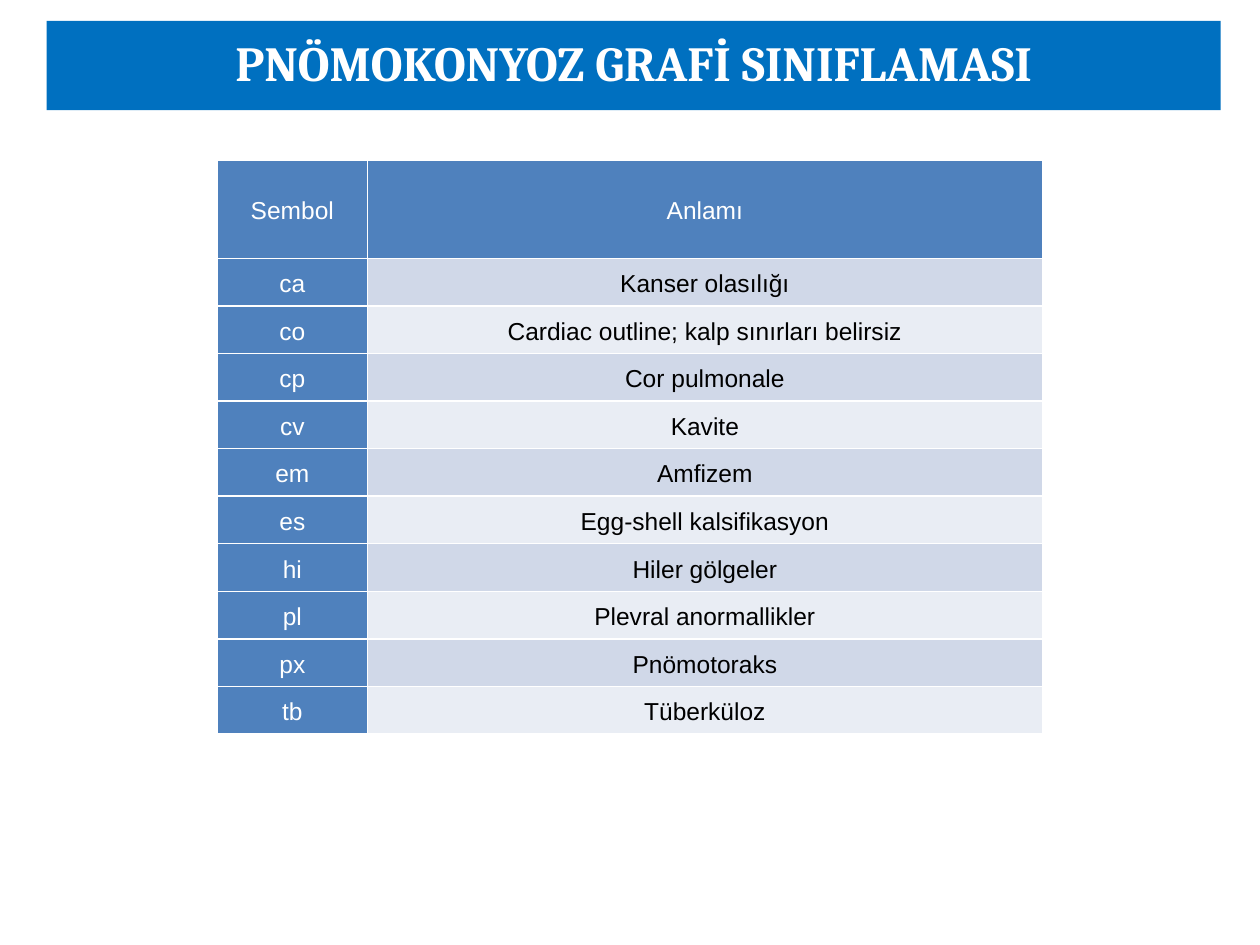
from lxml import etree
from pptx import Presentation
from pptx.dml.color import RGBColor
from pptx.enum import text
from pptx.oxml import ns
from pptx.util import Pt

TITLE = "PNÖMOKONYOZ GRAFİ SINIFLAMASI"
ROWS = [
    ("Sembol", "Anlamı"),
    ("ca", "Kanser olasılığı"),
    ("co", "Cardiac outline; kalp sınırları belirsiz"),
    ("cp", "Cor pulmonale"),
    ("cv", "Kavite"),
    ("em", "Amfizem"),
    ("es", "Egg-shell kalsifikasyon"),
    ("hi", "Hiler gölgeler"),
    ("pl", "Plevral anormallikler"),
    ("px", "Pnömotoraks"),
    ("tb", "Tüberküloz"),
]

WHITE = RGBColor(0xFF, 0xFF, 0xFF)
BLACK = RGBColor(0x00, 0x00, 0x00)
TITLE_BLUE = RGBColor(0x00, 0x70, 0xC0)
HEADER_BLUE = RGBColor(0x4F, 0x81, 0xBD)
BANDS = (RGBColor(0xE9, 0xED, 0xF4), RGBColor(0xD0, 0xD8, 0xE8))

TABLE_LEFT, TABLE_TOP = 124.2, 91.4
COLUMN_WIDTHS = (85.7, 385.8)
HEADER_HEIGHT, ROW_HEIGHT = 56.2, 27.2


def set_attributes(target, values):
    for name, value in values.items():
        setattr(target, name, value)


def format_paragraph(paragraph, line_spacing, font, color):
    paragraph.alignment = text.PP_ALIGN.CENTER
    paragraph.line_spacing = line_spacing
    set_attributes(paragraph.font, font)
    paragraph.font.color.rgb = color


def add_borders(cell, color, width):
    """Draw the four cell borders, which must come before the cell's fill."""
    properties = cell._tc.get_or_add_tcPr()
    for index, side in enumerate(("lnL", "lnR", "lnT", "lnB")):
        line = etree.Element(ns.qn(f"a:{side}"), w=str(Pt(width)))
        fill = etree.SubElement(line, ns.qn("a:solidFill"))
        etree.SubElement(fill, ns.qn("a:srgbClr"), val=str(color))
        properties.insert(index, line)


def add_title(slide):
    title = slide.shapes.title
    set_attributes(title, {"left": Pt(26.6), "top": Pt(12), "width": Pt(671), "height": Pt(51)})
    title.fill.solid()
    title.fill.fore_color.rgb = TITLE_BLUE
    frame = title.text_frame
    frame.text = TITLE
    set_attributes(frame, {
        "auto_size": text.MSO_AUTO_SIZE.NONE, "word_wrap": True,
        "vertical_anchor": text.MSO_ANCHOR.MIDDLE,
        "margin_left": 0, "margin_right": 0,
        "margin_top": Pt(3.6), "margin_bottom": Pt(3.6),
    })
    format_paragraph(frame.paragraphs[0], 0.9,
                     {"name": "Cambria", "size": Pt(28), "bold": True}, WHITE)


def add_symbol_table(slide):
    heights = [HEADER_HEIGHT] + [ROW_HEIGHT] * (len(ROWS) - 1)
    table = slide.shapes.add_table(
        len(ROWS), len(COLUMN_WIDTHS), Pt(TABLE_LEFT), Pt(TABLE_TOP),
        Pt(sum(COLUMN_WIDTHS)), Pt(sum(heights))).table
    for column, width in zip(table.columns, COLUMN_WIDTHS):
        column.width = Pt(width)
    for row_index, (row, height) in enumerate(zip(ROWS, heights)):
        table.rows[row_index].height = Pt(height)
        for column_index, words in enumerate(row):
            is_heading = row_index == 0 or column_index == 0
            cell = table.cell(row_index, column_index)
            cell.text = words
            set_attributes(cell, {
                "vertical_anchor": text.MSO_ANCHOR.MIDDLE,
                "margin_left": Pt(5), "margin_right": Pt(5),
                "margin_top": 0, "margin_bottom": 0,
            })
            cell.fill.solid()
            cell.fill.fore_color.rgb = HEADER_BLUE if is_heading else BANDS[row_index % 2]
            add_borders(cell, WHITE, 1)
            format_paragraph(cell.text_frame.paragraphs[0], 1.15,
                             {"name": "Arial", "size": Pt(14), "bold": False},
                             WHITE if is_heading else BLACK)


def main():
    presentation = Presentation()
    presentation.slide_width, presentation.slide_height = Pt(720), Pt(540)
    slide = presentation.slides.add_slide(presentation.slide_layouts.get_by_name("Title Only"))
    add_title(slide)
    add_symbol_table(slide)
    presentation.save("out.pptx")


if __name__ == "__main__":
    main()
